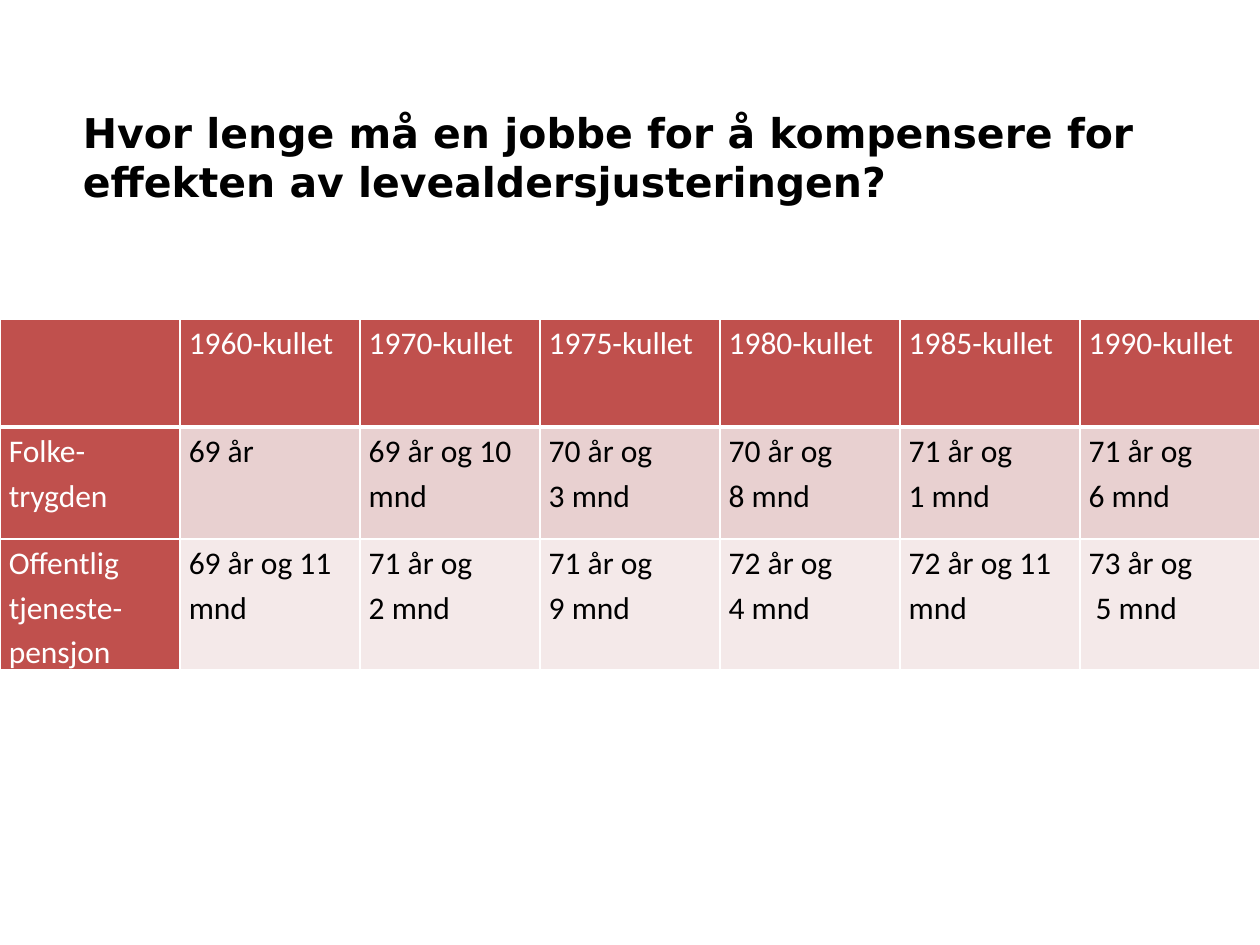
from dataclasses import dataclass

from lxml import etree
from pptx import Presentation, util as u
from pptx.dml.color import RGBColor
from pptx.enum import text
from pptx.oxml import ns

TITLE = "Hvor lenge må en jobbe for å kompensere for effekten av levealdersjusteringen?"
COHORTS = ["1960", "1970", "1975", "1980", "1985", "1990"]
ROWS = [
    [""] + [f"{year}-kullet" for year in COHORTS],
    ["Folke-trygden", "69 år", "69 år og 10 mnd", "70 år og\n3 mnd",
     "70 år og\n8 mnd", "71 år og\n1 mnd", "71 år og\n6 mnd"],
    ["Offentlig tjeneste-pensjon", "69 år og 11 mnd", "71 år og\n2 mnd",
     "71 år og\n9 mnd", "72 år og\n4 mnd", "72 år og 11 mnd", "73 år og\n 5 mnd"],
]
ROW_HEIGHTS = [0.86, 0.89, 0.89]
WIDTH, HEIGHT = 10, 7.5
TABLE_TOP = 2.53


@dataclass(frozen=True)
class Theme:
    title_font: str = "DejaVu Sans"
    body_font: str = "Calibri"
    title_size: float = 23.4
    body_size: float = 18
    ink: str = "000000"
    light: str = "FFFFFF"
    accent: str = "C0504D"
    bands: tuple = ("E8D0D0", "F4E9E9")
    rule: float = 1
    header_rule: float = 3


THEME = Theme()


def write(frame, content, *, font, size, color, bold=False, spacing=None):
    frame.word_wrap = True
    for index, line in enumerate(content.split("\n")):
        para = frame.add_paragraph() if index else frame.paragraphs[0]
        para.line_spacing = spacing
        para.font.size = u.Pt(size)
        if line:
            span = para.add_run()
            span.text = line
            span.font.name = font
            span.font.size = u.Pt(size)
            span.font.bold = bold
            span.font.color.rgb = RGBColor.from_string(color)


def add_borders(cell, bottom):
    properties = cell._tc.get_or_add_tcPr()
    widths = {"L": THEME.rule, "R": THEME.rule, "T": THEME.rule, "B": bottom}
    for index, (side, width) in enumerate(widths.items()):
        line = etree.Element(ns.qn(f"a:ln{side}"), w=str(u.Pt(width)))
        fill = etree.SubElement(line, ns.qn("a:solidFill"))
        etree.SubElement(fill, ns.qn("a:srgbClr"), val=THEME.light)
        properties.insert(index, line)


def add_title(page):
    box = page.shapes.add_textbox(u.Inches(0.56), u.Inches(0.77), u.Inches(8.94), u.Inches(0.94))
    box.text_frame.vertical_anchor = text.MSO_ANCHOR.MIDDLE
    write(box.text_frame, TITLE, font=THEME.title_font, size=THEME.title_size,
          color=THEME.ink, bold=True)


def add_pension_table(page):
    columns = len(ROWS[0])
    table = page.shapes.add_table(
        len(ROWS), columns, 0, u.Inches(TABLE_TOP), u.Inches(WIDTH), u.Inches(sum(ROW_HEIGHTS))
    ).table
    for column in table.columns:
        column.width = u.Inches(WIDTH / columns)
    for r, (labels, height) in enumerate(zip(ROWS, ROW_HEIGHTS)):
        table.rows[r].height = u.Inches(height)
        for c, label in enumerate(labels):
            cell = table.cell(r, c)
            heading = r == 0 or c == 0
            cell.margin_left = cell.margin_right = u.Inches(0.07)
            cell.margin_top = cell.margin_bottom = 0
            cell.fill.solid()
            cell.fill.fore_color.rgb = RGBColor.from_string(
                THEME.accent if heading else THEME.bands[r - 1])
            add_borders(cell, THEME.rule if r else THEME.header_rule)
            write(cell.text_frame, label, font=THEME.body_font, size=THEME.body_size,
                  color=THEME.light if heading else THEME.ink, spacing=1.15)


def main():
    deck = Presentation()
    deck.slide_width, deck.slide_height = u.Inches(WIDTH), u.Inches(HEIGHT)
    page = deck.slides.add_slide(deck.slide_layouts[6])
    add_title(page)
    add_pension_table(page)
    deck.save("out.pptx")


if __name__ == "__main__":
    main()
